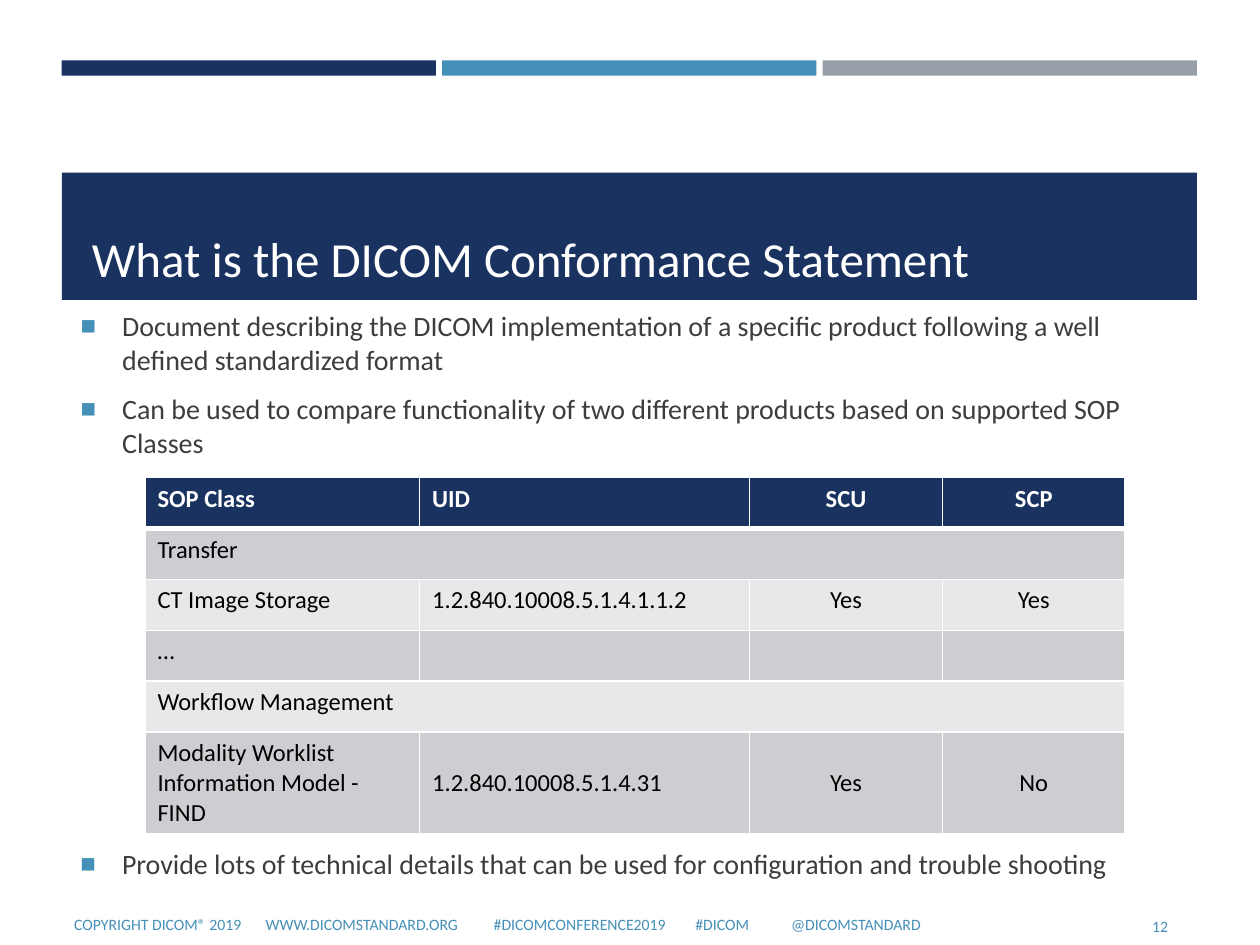
from lxml import etree
from pptx import Presentation
from pptx.dml.color import RGBColor
from pptx.enum.shapes import MSO_SHAPE
from pptx.enum.text import MSO_ANCHOR, MSO_AUTO_SIZE, PP_ALIGN
from pptx.oxml.ns import qn
from pptx.util import Inches, Pt

RECTANGLE = MSO_SHAPE.RECTANGLE
TOP, MIDDLE, BOTTOM = MSO_ANCHOR.TOP, MSO_ANCHOR.MIDDLE, MSO_ANCHOR.BOTTOM
LEFT, CENTER, RIGHT = PP_ALIGN.LEFT, PP_ALIGN.CENTER, PP_ALIGN.RIGHT
NO_AUTOFIT = MSO_AUTO_SIZE.NONE

NAVY, BLUE, GRAY = "1A3260", "4590B8", "969FA7"
WHITE, BLACK, TEXT = "FFFFFF", "000000", "3D3D3D"
BANDS = ("E8E8EA", "CDCED2")


def color(value):
    return RGBColor.from_string(value)


def add_element(parent, tag, **attributes):
    return etree.SubElement(parent, qn(tag), attributes)


def apply(target, values):
    for name, value in values.items():
        setattr(target, name, value)


class SlideBuilder:
    font_name = "Calibri"
    bullet_indent = Inches(0.33)

    def __init__(self, slide):
        self.slide = slide

    def place(self, shape, left, top, width, height):
        apply(shape, {"left": Inches(left), "top": Inches(top),
                      "width": Inches(width), "height": Inches(height)})

    def style_font(self, paragraph, size, text_color, bold=False):
        apply(paragraph.font, {"name": self.font_name, "size": Pt(size), "bold": bold})
        paragraph.font.color.rgb = color(text_color)

    def bar(self, left, top, width, height, fill):
        shape = self.slide.shapes.add_shape(
            RECTANGLE, Inches(left), Inches(top), Inches(width), Inches(height))
        shape.shadow.inherit = False
        shape.fill.solid()
        shape.fill.fore_color.rgb = color(fill)
        shape.line.fill.background()

    def text(self, shape, box, text, size, text_color, anchor=TOP, alignment=LEFT, tabs=()):
        """Fill a placeholder or text box with one paragraph."""
        self.place(shape, *box)
        frame = shape.text_frame
        apply(frame, {"word_wrap": True, "auto_size": NO_AUTOFIT,
                      "vertical_anchor": anchor, "text": text})
        paragraph = frame.paragraphs[0]
        paragraph.alignment = alignment
        if tabs:
            tab_list = add_element(paragraph._p.get_or_add_pPr(), "a:tabLst")
            for position in tabs:
                add_element(tab_list, "a:tab", pos=str(Inches(position)), algn="l")
        self.style_font(paragraph, size, text_color)

    def text_box(self, *arguments, **options):
        shape = self.slide.shapes.add_textbox(0, 0, 0, 0)
        self.text(shape, *arguments, **options)

    def bullets(self, shape, box, items):
        self.place(shape, *box)
        frame = shape.text_frame
        apply(frame, {"word_wrap": True, "auto_size": NO_AUTOFIT,
                      "vertical_anchor": TOP, "text": "\n".join(items)})
        for index, paragraph in enumerate(frame.paragraphs):
            properties = paragraph._p.get_or_add_pPr()
            properties.set("marL", str(self.bullet_indent))
            properties.set("indent", str(-self.bullet_indent))
            add_element(add_element(properties, "a:buClr"), "a:srgbClr", val=BLUE)
            add_element(properties, "a:buSzPct", val="92000")
            add_element(properties, "a:buFont", typeface="Arial")
            add_element(properties, "a:buChar", char="■")
            apply(paragraph, {"alignment": LEFT, "space_after": Pt(6),
                              "space_before": Pt(3 if index else 0)})
            self.style_font(paragraph, 16, TEXT)

    def cell_borders(self, cell, bottom_width):
        properties = cell._tc.get_or_add_tcPr()
        for tag in ("a:lnL", "a:lnR", "a:lnT", "a:lnB"):
            width = bottom_width if tag == "a:lnB" else 1
            line = add_element(properties, tag, w=str(Pt(width)))
            add_element(add_element(line, "a:solidFill"), "a:srgbClr", val=WHITE)

    def table(self, left, top, widths, heights, rows):
        """Draw a banded table; a row with a single entry spans all columns."""
        frame = self.slide.shapes.add_table(
            len(rows), len(widths), Inches(left), Inches(top),
            Inches(sum(widths)), Inches(sum(heights)))
        table = frame.table
        for column, width in zip(table.columns, widths):
            column.width = Inches(width)
        for row_index, (values, height) in enumerate(zip(rows, heights)):
            header = row_index == 0
            last = row_index == len(rows) - 1
            table.rows[row_index].height = Inches(height)
            if len(values) == 1:
                table.cell(row_index, 0).merge(table.cell(row_index, len(widths) - 1))
                values = values + [""] * (len(widths) - 1)
            for column_index, value in enumerate(values):
                cell = table.cell(row_index, column_index)
                self.cell_borders(cell, 3 if header else 1)
                cell.fill.solid()
                cell.fill.fore_color.rgb = color(NAVY if header else BANDS[row_index % 2])
                cell.text = value
                cell.vertical_anchor = MIDDLE if last else TOP
                paragraph = cell.text_frame.paragraphs[0]
                paragraph.alignment = CENTER if column_index > 1 else LEFT
                self.style_font(paragraph, 14, WHITE if header else BLACK, header)


def main():
    presentation = Presentation()
    presentation.slide_width, presentation.slide_height = Inches(10), Inches(7.5)
    slide = presentation.slides.add_slide(presentation.slide_layouts[1])
    builder = SlideBuilder(slide)
    title, body = slide.placeholders

    # Bars come first so that the title sits in front of its band.
    for index, fill in enumerate((NAVY, BLUE, GRAY)):
        builder.bar(0.49 + index * 3.02, 0.48, 2.97, 0.12, fill)
    builder.bar(0.49, 1.37, 9.01, 1.01, NAVY)
    for placeholder in (title, body):
        slide.shapes._spTree.append(placeholder._element)

    builder.text(title, (0.63, 1.42, 8.74, 0.91),
                 "What is the DICOM Conformance Statement", 28, WHITE, anchor=BOTTOM)
    builder.bullets(body, (0.54, 2.4, 8.85, 1.53), [
        "Document describing the DICOM implementation of a specific product "
        "following a well defined standardized format",
        "Can be used to compare functionality of two different products "
        "based on supported SOP Classes"])

    table_height, last_height = 2.83, 0.81
    row_height = (table_height - last_height) / 5
    builder.table(1.15, 3.79, [2.18, 2.62, 1.53, 1.45], [row_height] * 5 + [last_height], [
        ["SOP Class", "UID", "SCU", "SCP"],
        ["Transfer"],
        ["CT Image Storage", "1.2.840.10008.5.1.4.1.1.2", "Yes", "Yes"],
        ["…", "", "", ""],
        ["Workflow Management"],
        ["Modality Worklist Information Model - FIND", "1.2.840.10008.5.1.4.31", "Yes", "No"]])

    closing_box = slide.shapes.add_textbox(0, 0, 0, 0)
    builder.bullets(closing_box, (0.54, 6.67, 8.85, 0.59), [
        "Provide lots of technical details that can be used for configuration "
        "and trouble shooting"])

    builder.text_box((8.53, 7.15, 0.84, 0.4), "12", 9, BLUE, anchor=MIDDLE, alignment=RIGHT)
    footer = ["COPYRIGHT DICOM® 2019", "WWW.DICOMSTANDARD.ORG", "#DICOMCONFERENCE2019",
              "#DICOM", "@DICOMSTANDARD"]
    builder.text_box((0.49, 7.14, 8.46, 0.39), "\t".join(footer), 9, BLUE,
                     anchor=MIDDLE, tabs=(1.52, 3.33, 4.93, 5.69))

    presentation.save("out.pptx")


if __name__ == "__main__":
    main()
